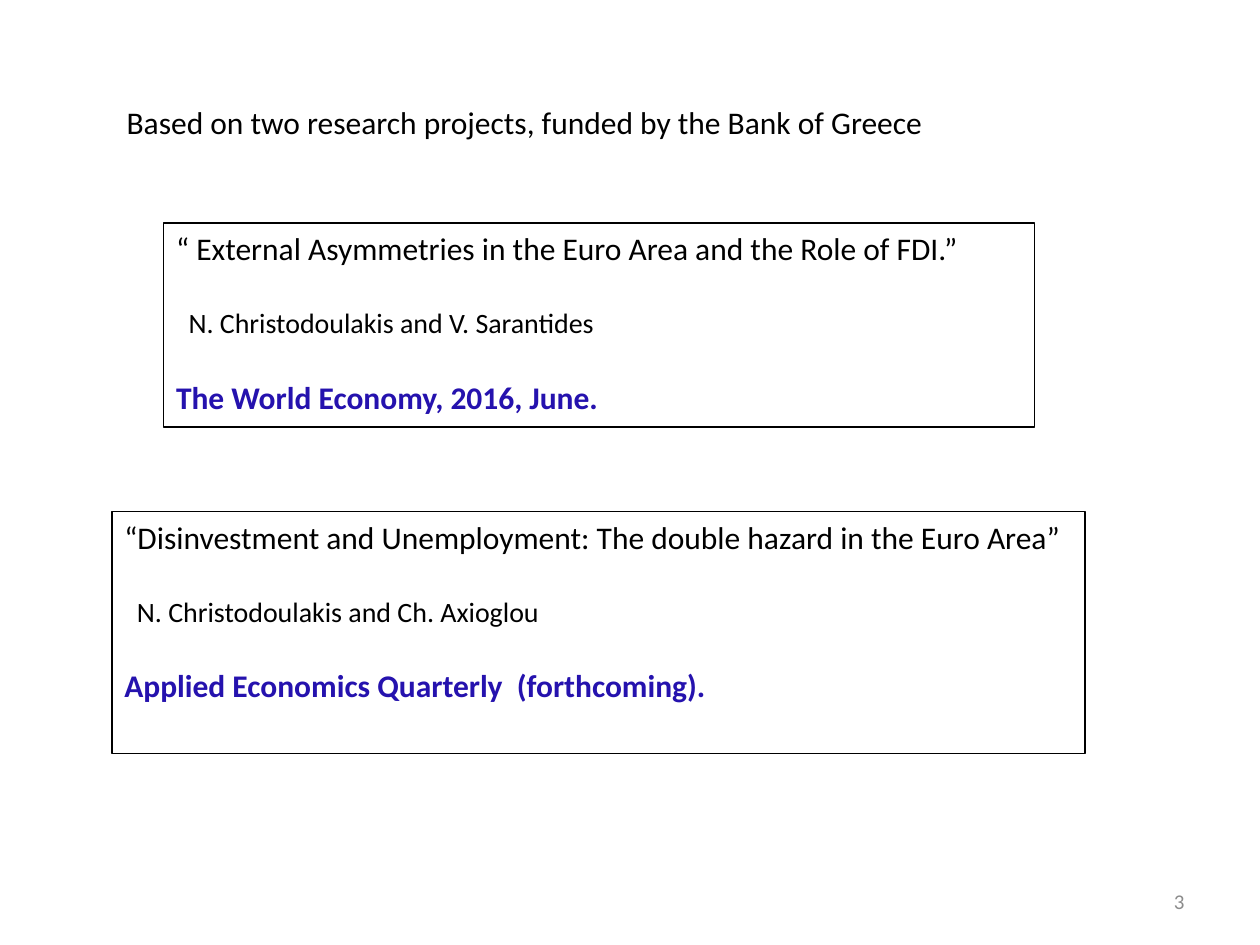
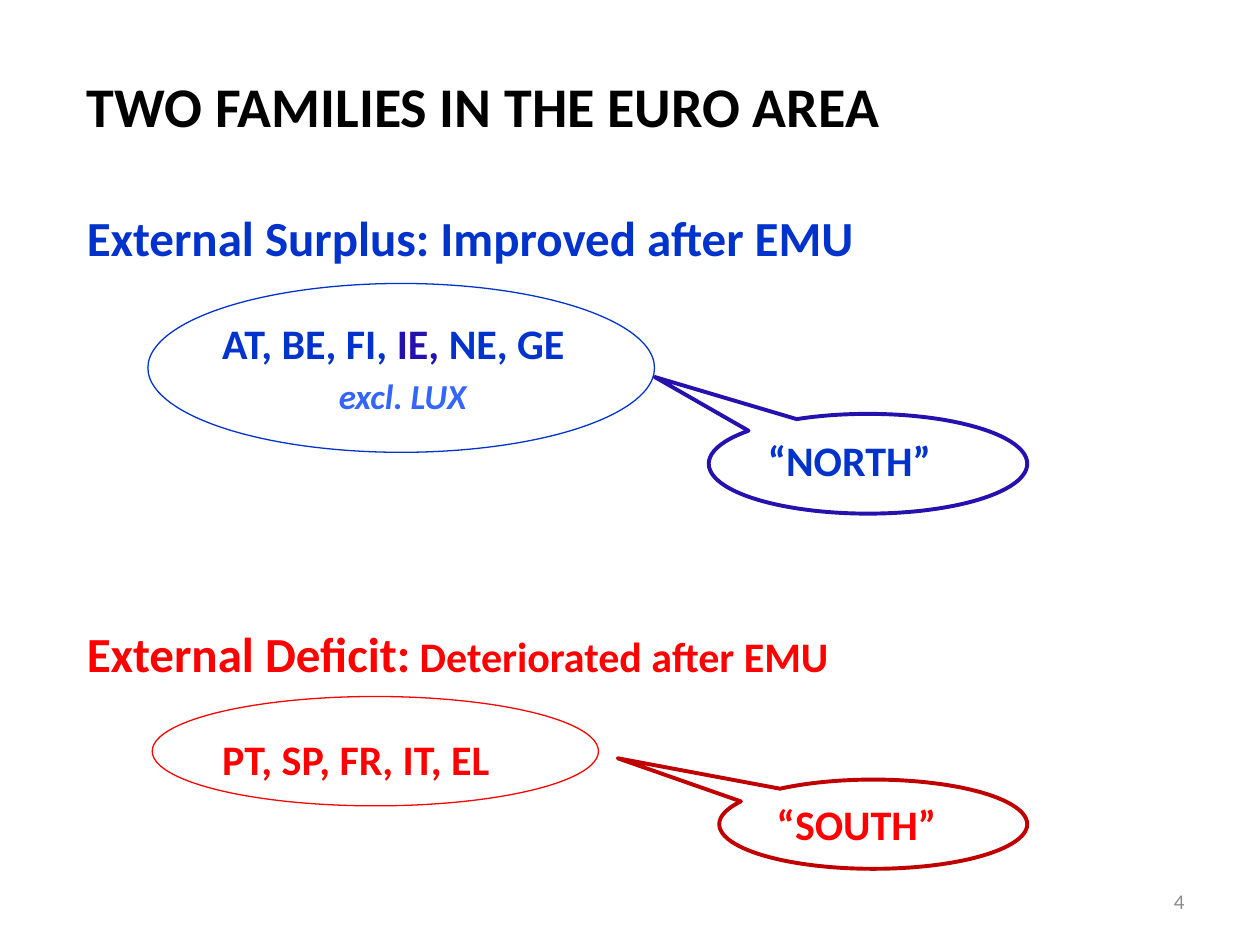
from pptx import Presentation
from pptx.dml.color import RGBColor
from pptx.enum.shapes import MSO_SHAPE
from pptx.enum.text import MSO_ANCHOR, PP_ALIGN
from pptx.util import Pt

FONT = "Calibri"
COLORS = {
    "black": "000000",
    "grey": "8C8C8C",
    "indigo": "2512AE",
    "blue": "0033CC",
    "light blue": "3366FF",
    "red": "FF0000",
    "dark red": "C00000",
}


def rgb(color):
    return RGBColor.from_string(COLORS[color])


def write(paragraph, pieces, before=0, indent=0, align=PP_ALIGN.LEFT):
    """Fill a paragraph with (text, size, color, bold, italic) pieces."""
    paragraph.alignment = align
    if before:
        paragraph.space_before = Pt(before)
    if indent:
        properties = paragraph._p.get_or_add_pPr()
        properties.set("marL", str(Pt(indent)))
        properties.set("indent", "0")
    for text, size, color, bold, italic in pieces:
        run = paragraph.add_run()
        run.text = text
        run.font.name = FONT
        run.font.size = Pt(size)
        run.font.bold = bold
        run.font.italic = italic
        run.font.color.rgb = rgb(color)


def plain(text, size, color="black"):
    return (text, size, color, False, False)


def bold(text, size, color="black", italic=False):
    return (text, size, color, True, italic)


def write_all(frame, lines):
    """Write lines of (pieces, space before, indent) into a text frame."""
    frame.word_wrap = True
    for number, (pieces, before, indent) in enumerate(lines):
        paragraph = frame.add_paragraph() if number else frame.paragraphs[0]
        write(paragraph, pieces, before, indent)


def add_text(slide, left, top, width, height, lines):
    box = slide.shapes.add_textbox(Pt(left), Pt(top), Pt(width), Pt(height))
    write_all(box.text_frame, lines)


def add_outline(slide, preset, left, top, width, height, color, weight=0.75):
    outline = slide.shapes.add_shape(preset, Pt(left), Pt(top), Pt(width), Pt(height))
    outline.shadow.inherit = False
    outline.fill.background()
    outline.line.color.rgb = rgb(color)
    outline.line.width = Pt(weight)
    outline.text_frame.vertical_anchor = MSO_ANCHOR.TOP
    return outline


def add_paper(slide, left, top, width, height, title, authors, journal):
    frame = add_outline(slide, MSO_SHAPE.RECTANGLE, left, top, width, height, "black")
    write_all(frame.text_frame, [
        ([plain(title, 18)], 0, 0),
        ([plain(authors, 16)], 22, 7.2),
        ([bold(journal, 18, "indigo")], 22, 0),
    ])


def add_callout(slide, left, top, width, height, tip, label, color, line_color):
    """Add an oval callout; tip is the pointer's offset from the centre."""
    callout = add_outline(slide, MSO_SHAPE.OVAL_CALLOUT, left, top, width, height,
                          line_color, 2.25)
    callout.adjustments[0], callout.adjustments[1] = tip
    write_all(callout.text_frame, [([bold(label, 24, color)], 0, 0)])


def add_slide(deck, number):
    """Add a blank slide with its page number."""
    slide = deck.slides.add_slide(deck.slide_layouts[6])
    footer = slide.shapes.add_textbox(Pt(516), Pt(500.5), Pt(168), Pt(28.75))
    footer.text_frame.word_wrap = True
    footer.text_frame.vertical_anchor = MSO_ANCHOR.MIDDLE
    write(footer.text_frame.paragraphs[0], [plain(str(number), 12, "grey")],
          align=PP_ALIGN.RIGHT)
    return slide


def build_projects(deck):
    slide = add_slide(deck, 3)
    add_paper(slide, 93.5, 127.5, 497.5, 116.5,
              "“ External Asymmetries in the Euro Area and the Role of FDI.”",
              "N. Christodoulakis and V. Sarantides",
              "The World Economy, 2016, June.")
    add_paper(slide, 64, 292.5, 556, 138,
              "“Disinvestment and Unemployment: The double hazard in the Euro Area”",
              "N. Christodoulakis and Ch. Axioglou",
              "Applied Economics Quarterly  (forthcoming).")
    intro = "Based on two research projects, funded by the Bank of Greece"
    add_text(slide, 65.25, 55.5, 483, 29, [([plain(intro, 18)], 0, 0)])


def build_families(deck):
    slide = add_slide(deck, 4)
    members_indent = 77.4
    add_text(slide, 42.5, 37.5, 658, 415, [
        ([bold("TWO FAMILIES IN THE EURO AREA", 32)], 0, 0),
        ([bold("External Surplus: Improved after EMU", 28, "blue")], 39, 0),
        ([bold("AT, BE, FI, ", 24, "blue"), bold("IE, ", 24, "indigo"),
          bold("NE, GE", 24, "blue")], 29.3, members_indent),
        ([bold("excl. LUX", 20, "light blue", italic=True)], 3.8, 144),
        ([bold("External Deficit:", 28, "red"),
          bold(" Deteriorated after EMU", 24, "red")], 118.2, 0),
        ([bold("PT, SP, FR, IT, EL", 24, "red")], 29.3, members_indent),
    ])
    add_outline(slide, MSO_SHAPE.OVAL, 87, 398, 255, 62.5, "red")
    add_outline(slide, MSO_SHAPE.OVAL, 84.5, 162, 289.5, 96.5, "blue")
    add_callout(slide, 405, 236.5, 182, 57, (-0.67, -0.87), "“NORTH”", "blue", "indigo")
    add_callout(slide, 411, 445.5, 176, 51, (-0.83, -0.74), "“SOUTH”", "red", "dark red")


def main():
    deck = Presentation()
    deck.slide_width, deck.slide_height = Pt(720), Pt(540)
    build_projects(deck)
    build_families(deck)
    deck.save("out.pptx")


if __name__ == "__main__":
    main()
